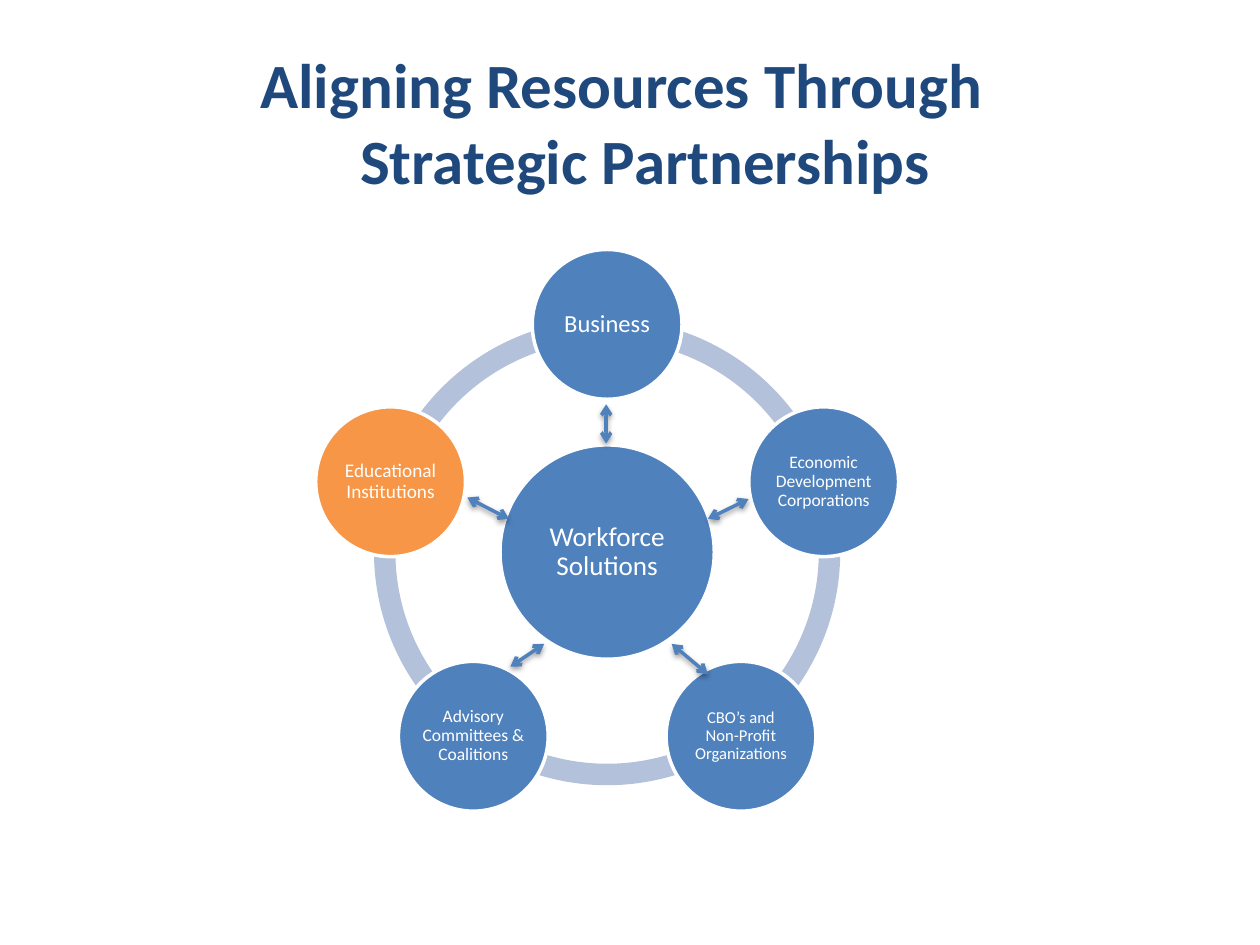
"""Build the strategic partnerships slide: a hub, a ring of partners and arrows."""
import math
from typing import NamedTuple

import lxml.etree
import pptx
import pptx.dml.color
import pptx.enum.shapes
import pptx.enum.text
import pptx.oxml.ns
import pptx.util

Cm = pptx.util.Cm
Pt = pptx.util.Pt
KIND = pptx.enum.shapes.MSO_SHAPE
ALIGN = pptx.enum.text.PP_ALIGN

BLUE, ORANGE, WHITE, NAVY, PALE = "4F81BD", "F79646", "FFFFFF", "1F497D", "B3C1DB"
MID_X, MID_Y = 12.24, 11.13
RING, ORBIT, HUB, NODE = 9.4, 4.59, 4.32, 3.02
STEP = 72


class Disc(NamedTuple):
    words: str
    size: float
    fill: str = BLUE
    inset: float = 0.03


class Arrow(NamedTuple):
    x1: float
    y1: float
    x2: float
    y2: float


CORE = Disc("Workforce Solutions", 15.5, inset=0.05)
DISCS = [
    Disc("Business", 14, inset=0.05),
    Disc("Economic Development Corporations", 10),
    Disc("CBO’s and Non-Profit Organizations", 9.5),
    Disc("Advisory Committees & Coalitions", 10),
    Disc("Educational Institutions", 11, ORANGE, 0.05),
]
ARROWS = [
    Arrow(12.22, 8.15, 12.22, 8.94),
    Arrow(15.09, 10.06, 14.27, 10.46),
    Arrow(10.97, 12.98, 10.29, 13.44),
    Arrow(13.54, 12.98, 14.27, 13.59),
    Arrow(10.26, 10.46, 9.42, 10.03),
]


def paint(target, tone: str) -> None:
    target.rgb = pptx.dml.color.RGBColor.from_string(tone)


def write(frame, words: str, *, size: float, tone: str, align=ALIGN.CENTER,
          bold: bool = False, space: float = 1.0, inset: float = 0.25) -> None:
    frame.word_wrap = True
    frame.auto_size = pptx.enum.text.MSO_AUTO_SIZE.NONE
    frame.vertical_anchor = pptx.enum.text.MSO_ANCHOR.MIDDLE
    frame.margin_left = frame.margin_right = Cm(inset)
    frame.margin_top = frame.margin_bottom = Cm(min(inset, 0.13))
    frame.text = words
    para = frame.paragraphs[0]
    para.alignment, para.line_spacing = align, space
    for run in para.runs:
        run.font.name, run.font.size, run.font.bold = "Calibri", Pt(size), bold
        paint(run.font.color, tone)


def place(slide, kind, x: float, y: float, width: float, fill: str):
    shape = slide.shapes.add_shape(
        kind, Cm(x - width / 2), Cm(y - width / 2), Cm(width), Cm(width))
    shape.shadow.inherit = False
    shape.fill.solid()
    paint(shape.fill.fore_color, fill)
    return shape


def draw_arc(slide, start: float) -> None:
    arc = place(slide, KIND.BLOCK_ARC, MID_X, MID_Y, RING, PALE)
    arc.line.fill.background()
    for spot, value in enumerate((start * 0.6, (start + STEP) % 360 * 0.6, 0.046)):
        arc.adjustments[spot] = value


def draw_disc(slide, disc: Disc, x: float, y: float, width: float) -> None:
    shape = place(slide, KIND.OVAL, x, y, width, disc.fill)
    paint(shape.line.color, WHITE)
    shape.line.width = Pt(2)
    write(shape.text_frame, disc.words, size=disc.size, tone=WHITE,
          space=0.9, inset=disc.inset)


def add_node(parent, tag: str, **attrs: str):
    return lxml.etree.SubElement(parent, pptx.oxml.ns.qn(tag), attrs)


def draw_arrow(slide, arrow: Arrow) -> None:
    line = slide.shapes.add_connector(
        pptx.enum.shapes.MSO_CONNECTOR.STRAIGHT, *map(Cm, arrow))
    paint(line.line.color, BLUE)
    line.line.width = Pt(2)
    props = line._element.spPr
    stroke = props.find(pptx.oxml.ns.qn("a:ln"))
    for end in ("a:headEnd", "a:tailEnd"):
        add_node(stroke, end, type="arrow")
    glow = add_node(add_node(props, "a:effectLst"), "a:outerShdw", blurRad="40000",
                    dist="20000", dir="5400000", rotWithShape="0")
    add_node(add_node(glow, "a:srgbClr", val="000000"), "a:alpha", val="38000")


def draw_title(slide) -> None:
    title = slide.shapes.title
    title.left, title.top, title.width, title.height = map(Cm, (4.14, 1.6, 20.07, 1.7))
    write(title.text_frame, "Aligning Resources Through\vStrategic Partnerships",
          size=36, tone=NAVY, align=ALIGN.LEFT, bold=True)
    props = title.text_frame.paragraphs[0]._p.get_or_add_pPr()
    props.set("marL", str(Cm(2.87)))
    props.set("indent", str(Cm(-2.01)))


def main() -> None:
    deck = pptx.Presentation()
    deck.slide_width, deck.slide_height = Cm(25.4), Cm(19.05)
    slide = deck.slides.add_slide(deck.slide_layouts[5])
    draw_title(slide)
    turns = [(270 + STEP * spot) % 360 for spot in range(len(DISCS))]
    for turn in turns:
        draw_arc(slide, turn)
    draw_disc(slide, CORE, MID_X, MID_Y, HUB)
    for disc, turn in zip(DISCS, turns):
        angle = math.radians(turn)
        draw_disc(slide, disc, MID_X + ORBIT * math.cos(angle),
                  MID_Y + ORBIT * math.sin(angle), NODE)
    for arrow in ARROWS:
        draw_arrow(slide, arrow)
    deck.save("out.pptx")


if __name__ == "__main__":
    main()
